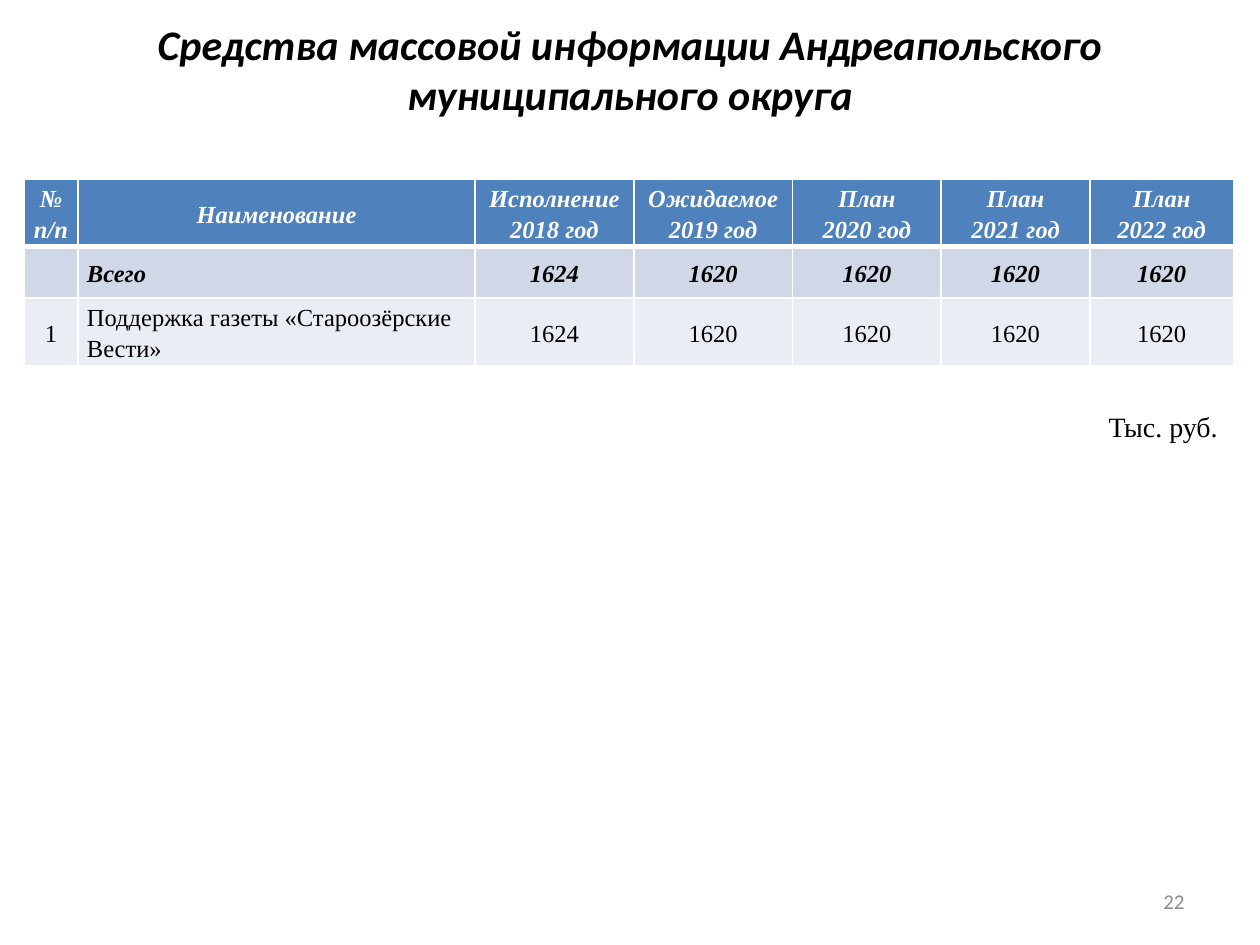
"""Builds a budget slide on mass media spending of a municipal district."""
from dataclasses import dataclass

from lxml import etree
from pptx import Presentation
from pptx.dml.color import RGBColor
from pptx.enum.text import MSO_ANCHOR, PP_ALIGN
from pptx.oxml.ns import qn
from pptx.util import Inches, Pt

LEFT, CENTER, RIGHT = PP_ALIGN.LEFT, PP_ALIGN.CENTER, PP_ALIGN.RIGHT
TOP, MIDDLE = MSO_ANCHOR.TOP, MSO_ANCHOR.MIDDLE
BLANK_LAYOUT = 6


@dataclass(frozen=True)
class Theme:
    heading_font: str = "Calibri"
    body_font: str = "Times New Roman"
    text: str = "000000"
    muted: str = "8C8C8C"
    white: str = "FFFFFF"
    header_fill: str = "4F81BD"
    total_fill: str = "D0D8E8"
    item_fill: str = "E9EDF4"
    title_size: int = 24
    unit_size: int = 16
    table_size: int = 14
    number_size: int = 12


def write_text(frame, text, *, font, size, color, align=LEFT, strong=False, spacing=None):
    for index, line in enumerate(text.split("\n")):
        para = frame.add_paragraph() if index else frame.paragraphs[0]
        para.alignment = align
        para.line_spacing = spacing
        para.font.size = Pt(size)
        if not line:
            continue
        span = para.add_run()
        span.text = line
        span.font.name = font
        span.font.size = Pt(size)
        span.font.bold = span.font.italic = strong
        span.font.color.rgb = RGBColor.from_string(color)


class SlideBuilder:
    def __init__(self, page, theme):
        self.page = page
        self.theme = theme

    def text_box(self, text, left, top, width, height, anchor=TOP, **text_format):
        box = self.page.shapes.add_textbox(
            Inches(left), Inches(top), Inches(width), Inches(height))
        box.text_frame.word_wrap = True
        box.text_frame.vertical_anchor = anchor
        write_text(box.text_frame, text, **text_format)

    def borders(self, cell, **widths):
        properties = cell._tc.get_or_add_tcPr()
        for side in ("L", "R", "T", "B"):
            line = etree.SubElement(
                properties, qn(f"a:ln{side}"), w=str(Pt(widths.get(side, 1))))
            fill = etree.SubElement(line, qn("a:solidFill"))
            etree.SubElement(fill, qn("a:srgbClr"), val=self.theme.white)

    def table(self, rows, left, top, column_widths, row_height):
        theme = self.theme
        styles = [
            (theme.header_fill, theme.white, True, {"B": 3}),
            (theme.total_fill, theme.text, True, {"T": 3}),
            (theme.item_fill, theme.text, False, {}),
        ]
        table = self.page.shapes.add_table(
            len(rows), len(column_widths), Inches(left), Inches(top),
            Inches(sum(column_widths)), Inches(row_height * len(rows))).table
        for column, width in zip(table.columns, column_widths):
            column.width = Inches(width)
        for row_index, (values, style) in enumerate(zip(rows, styles)):
            fill, color, strong, widths = style
            for column_index, text in enumerate(values):
                cell = table.cell(row_index, column_index)
                cell.margin_left = cell.margin_right = Inches(0.07)
                cell.margin_top = cell.margin_bottom = 0
                cell.vertical_anchor = MIDDLE
                self.borders(cell, **widths)
                cell.fill.solid()
                cell.fill.fore_color.rgb = RGBColor.from_string(fill)
                is_name = row_index > 0 and column_index == 1
                write_text(cell.text_frame, text, font=theme.body_font,
                           size=theme.table_size, color=color, strong=strong,
                           align=LEFT if is_name else CENTER, spacing=1.15)


def main():
    theme = Theme()
    deck = Presentation()
    deck.slide_width, deck.slide_height = Inches(10), Inches(7.5)
    page = deck.slides.add_slide(deck.slide_layouts[BLANK_LAYOUT])
    builder = SlideBuilder(page, theme)

    builder.text_box(
        "Средства массовой информации Андреапольского муниципального округа",
        0.5, -0.08, 9, 1.25, anchor=MIDDLE, font=theme.heading_font,
        size=theme.title_size, color=theme.text, align=CENTER, strong=True)

    amounts = ["1624"] + ["1620"] * 4
    plans = [f"План\n{year} год" for year in (2020, 2021, 2022)]
    rows = [
        ["№ п/п", "Наименование", "Исполнение 2018 год", "Ожидаемое 2019 год", *plans],
        ["", "Всего", *amounts],
        ["1", "Поддержка газеты «Староозёрские Вести»", *amounts],
    ]
    builder.table(rows, 0.19, 1.42, [0.43, 3.15, 1.26, 1.26, 1.18, 1.18, 1.14], 0.41)

    builder.text_box("Тыс. руб.", 8.7, 3.2, 1.09, 0.47, font=theme.body_font,
                     size=theme.unit_size, color=theme.text)
    builder.text_box("22", 7.17, 6.95, 2.33, 0.4, anchor=MIDDLE,
                     font=theme.heading_font, size=theme.number_size,
                     color=theme.muted, align=RIGHT)
    deck.save("out.pptx")


if __name__ == "__main__":
    main()
